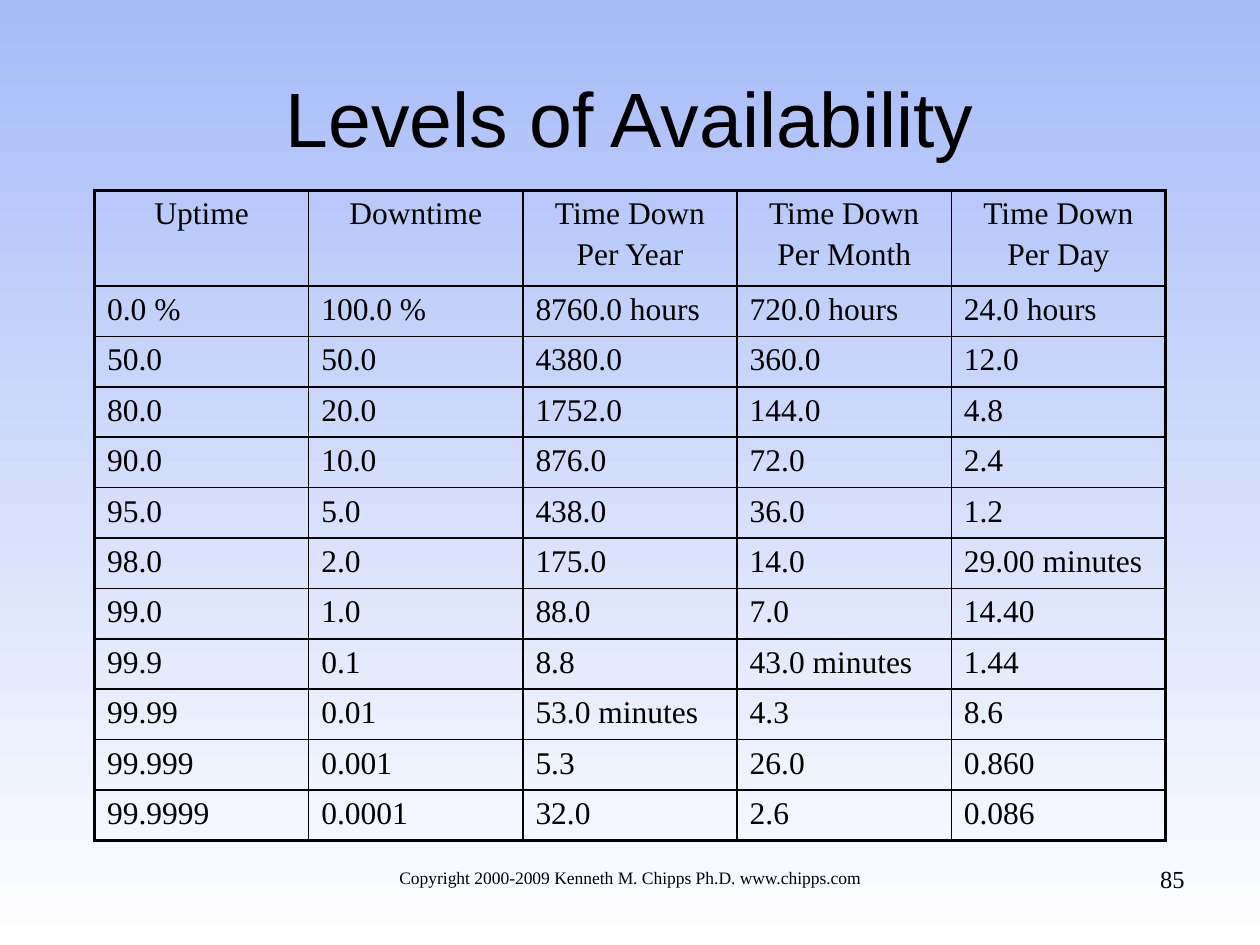
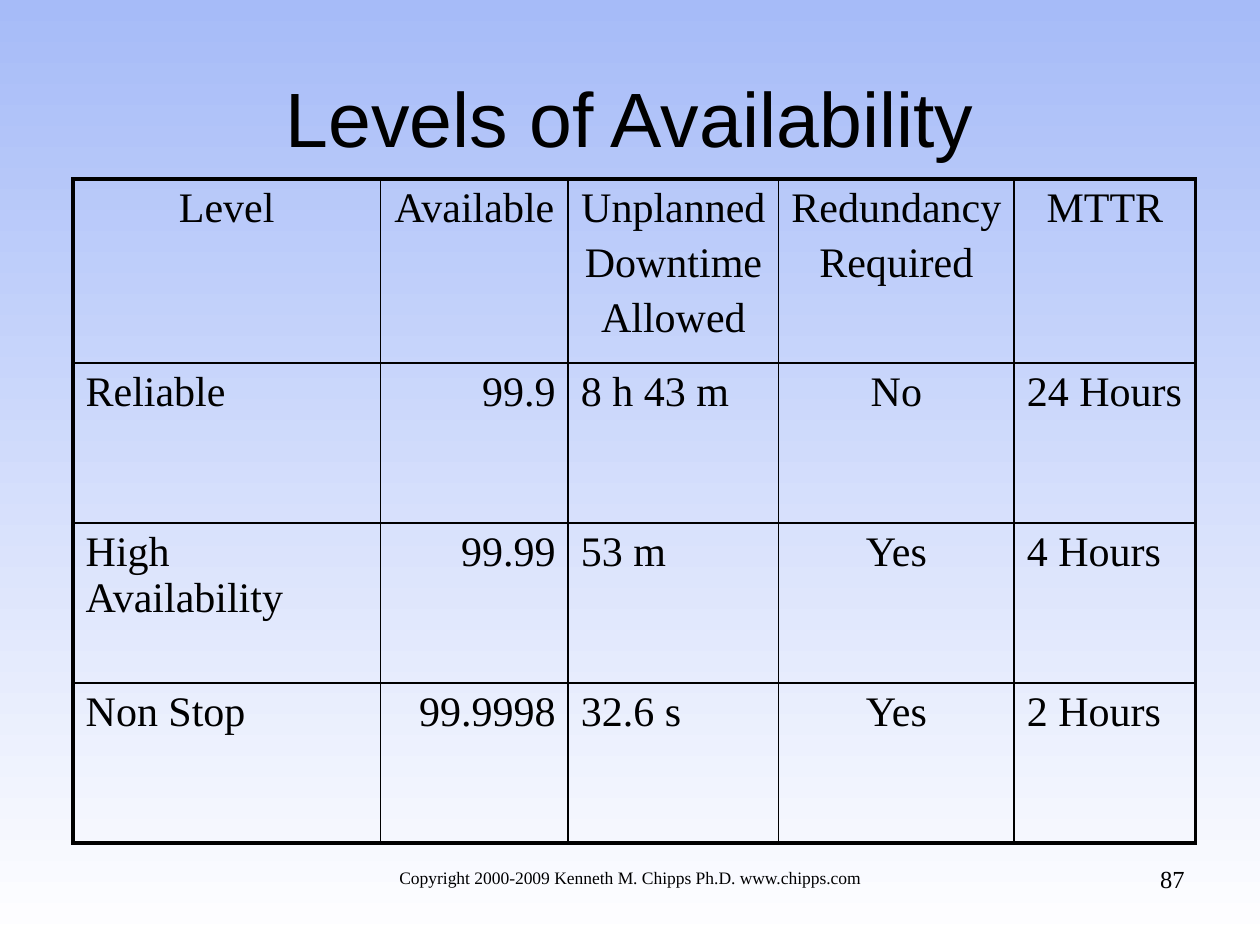
from dataclasses import dataclass

from lxml.etree import SubElement
from pptx import Presentation
from pptx.dml.color import RGBColor
from pptx.enum.text import MSO_ANCHOR, PP_ALIGN
from pptx.oxml.ns import qn
from pptx.presentation import Presentation as Deck
from pptx.slide import Slide
from pptx.table import Table, _Cell
from pptx.text.text import TextFrame
from pptx.util import Inches, Pt

LEFT, CENTER, RIGHT = PP_ALIGN.LEFT, PP_ALIGN.CENTER, PP_ALIGN.RIGHT


@dataclass(frozen=True)
class Theme:
    ink: str = "000000"
    sky: str = "A6BBF8"
    paper: str = "FFFFFF"
    title_font: str = "Arial"
    body_font: str = "Times New Roman"
    title_size: float = 44
    footer_size: float = 10
    number_size: float = 14
    outer_line: float = 2.25
    inner_line: float = 1
    paragraph_gap: float = 0.2  # share of the type size


@dataclass(frozen=True)
class Box:
    left: float
    top: float
    width: float
    height: float

    def lengths(self) -> tuple[Inches, ...]:
        return tuple(Inches(v) for v in (self.left, self.top, self.width, self.height))


@dataclass(frozen=True)
class AvailabilityTable:
    left: float
    top: float
    columns: list[float]
    header_height: float
    row_height: float
    size: float
    aligns: list[PP_ALIGN]
    header: list[str]
    body: list[list[str]]


@dataclass(frozen=True)
class AvailabilitySlide:
    number: int
    table: AvailabilityTable


THEME = Theme()
TITLE = "Levels of Availability"
COPYRIGHT = "Copyright 2000-2009 Kenneth M. Chipps Ph.D. www.chipps.com"
TITLE_BOX = Box(0.5, 0.3, 9, 1.25)
FOOTER_BOX = Box(3, 6.83, 4, 0.52)
NUMBER_BOX = Box(7.17, 6.81, 2.33, 0.52)

DOWNTIME = AvailabilityTable(
    left=0.75, top=1.51, columns=[1.7] * 5,
    header_height=0.76, row_height=0.4, size=18, aligns=[LEFT] * 5,
    header=["Uptime", "Downtime", "Time Down\nPer Year",
            "Time Down\nPer Month", "Time Down\nPer Day"],
    body=[
        ["0.0 %", "100.0 %", "8760.0 hours", "720.0 hours", "24.0 hours"],
        ["50.0", "50.0", "4380.0", "360.0", "12.0"],
        ["80.0", "20.0", "1752.0", "144.0", "4.8"],
        ["90.0", "10.0", "876.0", "72.0", "2.4"],
        ["95.0", "5.0", "438.0", "36.0", "1.2"],
        ["98.0", "2.0", "175.0", "14.0", "29.00 minutes"],
        ["99.0", "1.0", "88.0", "7.0", "14.40"],
        ["99.9", "0.1", "8.8", "43.0 minutes", "1.44"],
        ["99.99", "0.01", "53.0 minutes", "4.3", "8.6"],
        ["99.999", "0.001", "5.3", "26.0", "0.860"],
        ["99.9999", "0.0001", "32.0", "2.6", "0.086"],
    ],
)

SERVICE_LEVELS = AvailabilityTable(
    left=0.58, top=1.42, columns=[2.44, 1.49, 1.67, 1.87, 1.44],
    header_height=1.46, row_height=1.27, size=24,
    aligns=[LEFT, RIGHT, LEFT, CENTER, LEFT],
    header=["Level", "Available", "Unplanned\nDowntime\nAllowed",
            "Redundancy\nRequired", "MTTR"],
    body=[
        ["Reliable", "99.9", "8 h 43 m", "No", "24 Hours"],
        ["High Availability", "99.99", "53 m", "Yes", "4 Hours"],
        ["Non Stop", "99.9998", "32.6 s", "Yes", "2 Hours"],
    ],
)

SLIDES = [AvailabilitySlide(85, DOWNTIME), AvailabilitySlide(87, SERVICE_LEVELS)]


def write(tf: TextFrame, text: str, size: float, align: PP_ALIGN,
          font: str = THEME.body_font) -> None:
    """Write each line of text as a paragraph of its own."""
    tf.word_wrap = True
    for i, line in enumerate(text.split("\n")):
        p = tf.add_paragraph() if i else tf.paragraphs[0]
        p.alignment = align
        p.space_before = Pt(size * THEME.paragraph_gap if i else 0)
        r = p.add_run()
        r.text = line
        r.font.name = font
        r.font.size = Pt(size)
        r.font.color.rgb = RGBColor.from_string(THEME.ink)


def set_borders(cell: _Cell, widths: dict[str, float]) -> None:
    tc_pr = cell._tc.get_or_add_tcPr()
    for side, width in widths.items():
        line = SubElement(tc_pr, qn(f"a:ln{side}"), w=str(int(Pt(width))))
        fill = SubElement(line, qn("a:solidFill"))
        SubElement(fill, qn("a:srgbClr"), val=THEME.ink)


def frame_table(table: Table) -> None:
    """Rule the table with thin inner lines and a heavy outline."""
    last_row, last_col = len(table.rows) - 1, len(table.columns) - 1
    for i in range(last_row + 1):
        for j in range(last_col + 1):
            cell = table.cell(i, j)
            outer = {"L": j == 0, "R": j == last_col, "T": i == 0, "B": i == last_row}
            set_borders(cell, {side: THEME.outer_line if edge else THEME.inner_line
                               for side, edge in outer.items()})
            cell.fill.background()


def add_availability_table(s: Slide, spec: AvailabilityTable) -> None:
    rows = [spec.header, *spec.body]
    heights = [spec.header_height] + [spec.row_height] * len(spec.body)
    box = Box(spec.left, spec.top, sum(spec.columns), sum(heights))
    table = s.shapes.add_table(len(rows), len(spec.columns), *box.lengths()).table
    table.first_row = table.horz_banding = False
    for column, width in zip(table.columns, spec.columns):
        column.width = Inches(width)
    for i, (texts, height) in enumerate(zip(rows, heights)):
        table.rows[i].height = Inches(height)
        for j, text in enumerate(texts):
            align = spec.aligns[j] if i else CENTER
            write(table.cell(i, j).text_frame, text, spec.size, align)
    frame_table(table)


def add_title(s: Slide) -> None:
    sp = s.shapes.title
    sp.left, sp.top, sp.width, sp.height = TITLE_BOX.lengths()
    sp.text_frame.vertical_anchor = MSO_ANCHOR.MIDDLE
    write(sp.text_frame, TITLE, THEME.title_size, CENTER, THEME.title_font)


def add_label(s: Slide, box: Box, text: str, size: float, align: PP_ALIGN) -> None:
    write(s.shapes.add_textbox(*box.lengths()).text_frame, text, size, align)


def set_background(prs: Deck) -> None:
    fill = prs.slide_master.background.fill
    fill.gradient()
    fill.gradient_angle = 270
    for stop, color, position in zip(fill.gradient_stops, (THEME.sky, THEME.paper), (0, 1)):
        stop.color.rgb = RGBColor.from_string(color)
        stop.position = position


def add_slide(prs: Deck, content: AvailabilitySlide) -> None:
    s = prs.slides.add_slide(prs.slide_layouts.get_by_name("Title Only"))
    add_title(s)
    add_availability_table(s, content.table)
    add_label(s, FOOTER_BOX, COPYRIGHT, THEME.footer_size, CENTER)
    add_label(s, NUMBER_BOX, str(content.number), THEME.number_size, RIGHT)


def main() -> None:
    prs = Presentation()
    prs.slide_width, prs.slide_height = Inches(10), Inches(7.5)
    set_background(prs)
    for content in SLIDES:
        add_slide(prs, content)
    prs.save("out.pptx")


if __name__ == "__main__":
    main()
